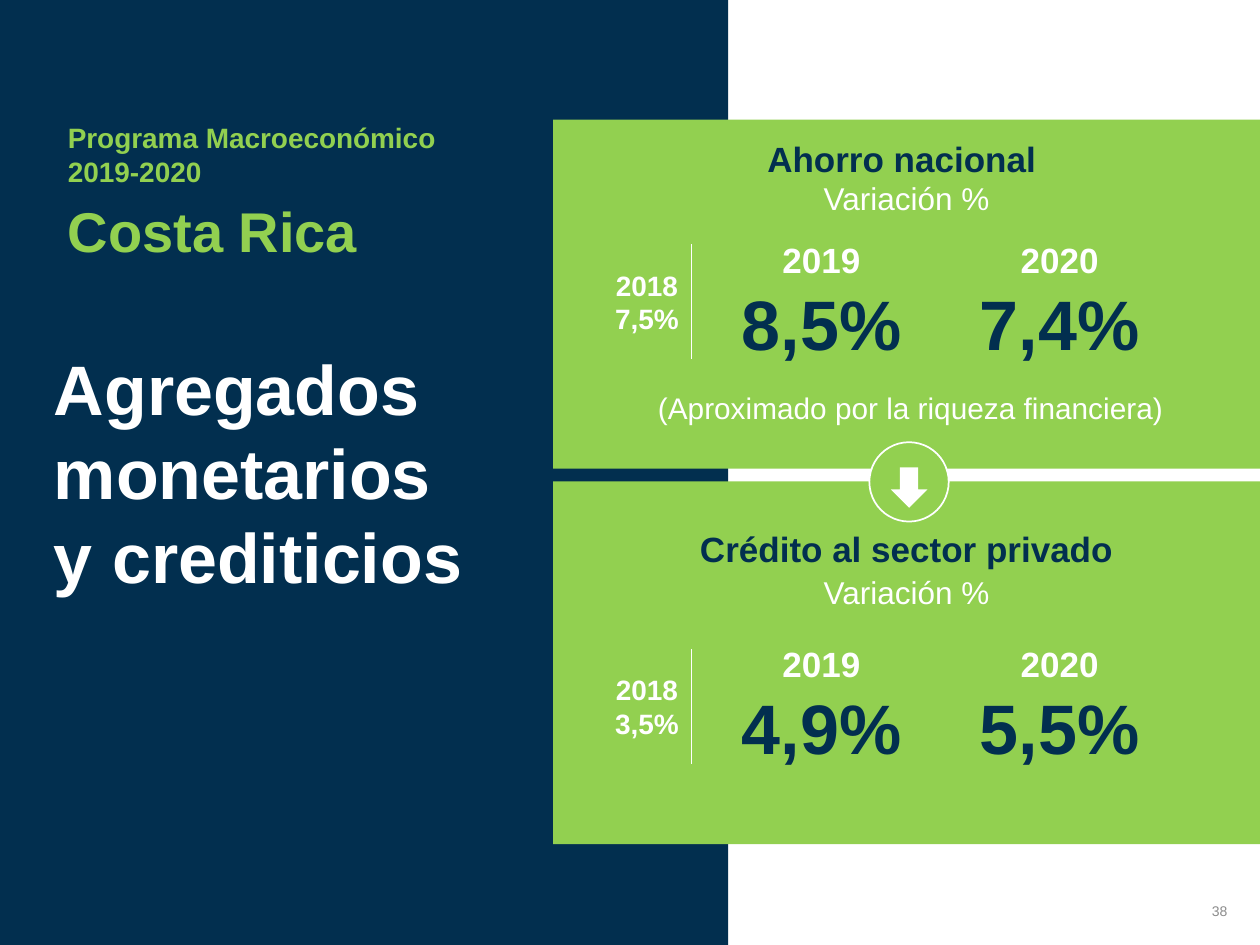
from dataclasses import dataclass
from typing import Optional

from lxml.etree import SubElement
from pptx import Presentation
from pptx.dml.color import RGBColor
from pptx.enum.shapes import MSO_CONNECTOR as Connector, MSO_SHAPE as Shape
from pptx.enum.text import MSO_ANCHOR as Anchor, PP_ALIGN as Align
from pptx.oxml.ns import qn
from pptx.util import Inches, Pt


@dataclass(frozen=True)
class Theme:
    font: str = "Arial"
    navy: str = "022F4F"
    green: str = "92D050"
    white: str = "FFFFFF"
    gray: str = "8C8C8C"
    headline: int = 40
    country: int = 32
    heading: int = 20
    subtitle: int = 18
    note: int = 17
    label: int = 16
    page_number: int = 8


@dataclass(frozen=True)
class Box:
    left: float
    top: float
    width: float
    height: float

    def lengths(self) -> list:
        return [Inches(value) for value in (self.left, self.top, self.width, self.height)]


@dataclass(frozen=True)
class Line:
    text: str
    size: int
    color: str
    bold: bool = True


@dataclass(frozen=True)
class Indicator:
    panel: Box
    heading: str
    heading_top: float
    subtitle_top: float
    figures_top: float
    values: dict[str, str]


THEME = Theme()
FIGURE_LEFTS = {"2019": 5.78, "2020": 7.67}
INDICATORS = [
    Indicator(Box(4.39, 0.95, 5.61, 2.77), "Ahorro nacional ", 1.04, 1.37, 1.84,
              {"2018": "7,5%", "2019": "8,5%", "2020": "7,4%"}),
    Indicator(Box(4.39, 3.82, 5.61, 2.88), "Crédito al sector privado", 4.14, 4.5, 5.05,
              {"2018": "3,5%", "2019": "4,9%", "2020": "5,5%"}),
]


def add_block(slide, kind: Shape, box: Box, fill: str, outline: Optional[str] = None) -> None:
    shape = slide.shapes.add_shape(kind, *box.lengths())
    shape.shadow.inherit = False
    shape.fill.solid()
    shape.fill.fore_color.rgb = RGBColor.from_string(fill)
    if outline:
        shape.line.color.rgb = RGBColor.from_string(outline)
        shape.line.width = Pt(1)
    else:
        shape.line.fill.background()


def add_text(slide, box: Box, lines: list[Line], align: Align = Align.LEFT,
             wrap: bool = True, anchor: Anchor = Anchor.TOP) -> None:
    frame = slide.shapes.add_textbox(*box.lengths()).text_frame
    frame.word_wrap = wrap
    frame.vertical_anchor = anchor
    for index, line in enumerate(lines):
        paragraph = frame.add_paragraph() if index else frame.paragraphs[0]
        paragraph.alignment = align
        run = paragraph.add_run()
        run.text = line.text
        run.font.name = THEME.font
        run.font.size = Pt(line.size)
        run.font.bold = line.bold
        run.font.color.rgb = RGBColor.from_string(line.color)


def add_divider(slide, left: float, top: float, height: float) -> None:
    connector = slide.shapes.add_connector(
        Connector.STRAIGHT, Inches(left), Inches(top), Inches(left), Inches(top + height))
    connector.line.color.rgb = RGBColor.from_string(THEME.white)
    connector.line.width = Pt(0.5)
    SubElement(connector._element.spPr, qn("a:effectLst"))


def add_indicator(slide, indicator: Indicator) -> None:
    panel, top = indicator.panel, indicator.figures_top
    add_block(slide, Shape.RECTANGLE, panel, THEME.green)
    add_text(slide, Box(panel.left, indicator.heading_top, panel.width, 0.44),
             [Line(indicator.heading, THEME.heading, THEME.navy)], Align.CENTER)
    add_text(slide, Box(panel.left, indicator.subtitle_top, panel.width, 0.4),
             [Line("Variación %", THEME.subtitle, THEME.white, False)], Align.CENTER)
    add_text(slide, Box(4.78, top + 0.24, 0.71, 0.64),
             [Line(text, THEME.label, THEME.white)
              for text in ("2018", indicator.values["2018"])], Align.CENTER, wrap=False)
    add_divider(slide, 5.49, top + 0.1, 0.91)
    for year, left in FIGURE_LEFTS.items():
        add_text(slide, Box(left, top, 1.48, 1.11),
                 [Line(year, THEME.heading, THEME.white),
                  Line(indicator.values[year], THEME.headline, THEME.navy)],
                 Align.CENTER, wrap=False)


def main() -> None:
    presentation = Presentation()
    presentation.slide_width, presentation.slide_height = Inches(10), Inches(7.5)
    slide = presentation.slides.add_slide(presentation.slide_layouts[6])

    add_block(slide, Shape.RECTANGLE, Box(0, 0, 5.78, 7.5), THEME.navy)
    add_text(slide, Box(0.44, 0.91, 3.16, 0.64),
             [Line(text, THEME.label, THEME.green)
              for text in ("Programa Macroeconómico", "2019-2020")], wrap=False)
    add_text(slide, Box(0.44, 1.51, 3.3, 0.64),
             [Line("Costa Rica", THEME.country, THEME.green)])
    add_text(slide, Box(0.33, 2.69, 3.64, 2.12),
             [Line("Agregados monetarios y crediticios", THEME.headline, THEME.white)])

    for indicator in INDICATORS:
        add_indicator(slide, indicator)
    add_text(slide, Box(4.39, 3.04, 5.61, 0.39),
             [Line(" (Aproximado por la riqueza financiera)", THEME.note, THEME.white, False)],
             Align.CENTER)

    add_block(slide, Shape.OVAL, Box(6.9, 3.51, 0.63, 0.63), THEME.green, THEME.white)
    add_block(slide, Shape.DOWN_ARROW, Box(7.07, 3.71, 0.29, 0.32), THEME.white)
    add_text(slide, Box(7.06, 7.03, 2.78, 0.4),
             [Line("38", THEME.page_number, THEME.gray, False)], Align.RIGHT,
             anchor=Anchor.MIDDLE)
    presentation.save("out.pptx")


if __name__ == "__main__":
    main()
